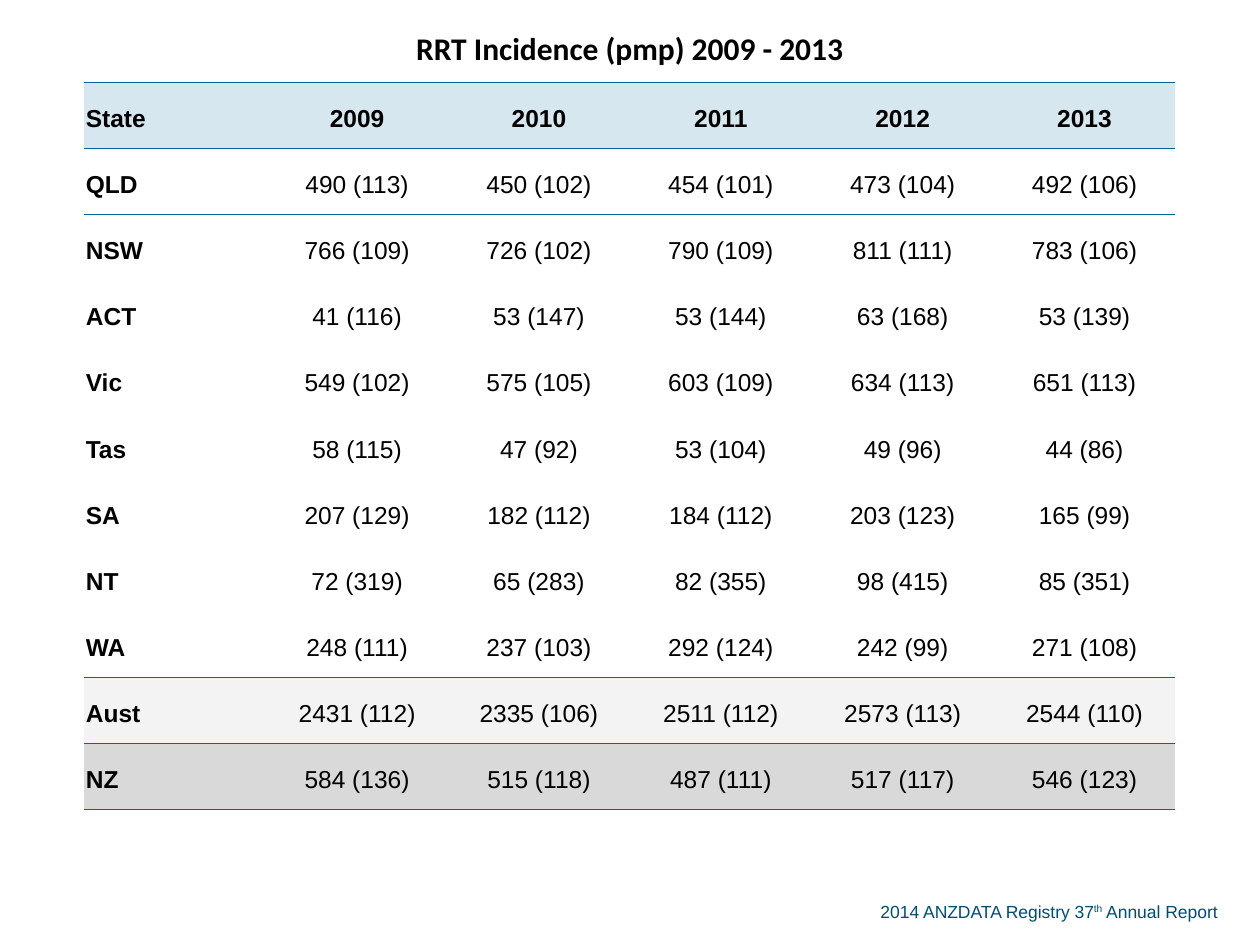
from lxml import etree
from pptx import Presentation
from pptx import util as u
from pptx.dml.color import RGBColor
from pptx.enum import text
from pptx.oxml.ns import qn

# Content
TITLE = "RRT Incidence (pmp) 2009 - 2013"
HEADER = ("State", "2009", "2010", "2011", "2012", "2013")
ROWS = [
    ("QLD", "490 (113)", "450 (102)", "454 (101)", "473 (104)", "492 (106)"),
    ("NSW", "766 (109)", "726 (102)", "790 (109)", "811 (111)", "783 (106)"),
    ("ACT", "41 (116)", "53 (147)", "53 (144)", "63 (168)", "53 (139)"),
    ("Vic", "549 (102)", "575 (105)", "603 (109)", "634 (113)", "651 (113)"),
    ("Tas", "58 (115)", "47 (92)", "53 (104)", "49 (96)", "44 (86)"),
    ("SA", "207 (129)", "182 (112)", "184 (112)", "203 (123)", "165 (99)"),
    ("NT", "72 (319)", "65 (283)", "82 (355)", "98 (415)", "85 (351)"),
    ("WA", "248 (111)", "237 (103)", "292 (124)", "242 (99)", "271 (108)"),
    ("Aust", "2431 (112)", "2335 (106)", "2511 (112)", "2573 (113)", "2544 (110)"),
    ("NZ", "584 (136)", "515 (118)", "487 (111)", "517 (117)", "546 (123)"),
]
SOURCE = (("2014 ANZDATA Registry 37", False), ("th", True), (" Annual Report", False))

COLORS = {"text": "000000", "rule": "006699", "source": "004D73",
          "State": "D7E7EF", "Aust": "F3F3F3", "NZ": "D9D9D9"}
RULED = ("State", "Aust", "NZ")  # rows with a line above and below
NO_STYLE = "{2D5ABB26-0587-4C30-8999-92F81FD0307C}"


def rgb(name):
    return RGBColor.from_string(COLORS[name])


def set_font(font, name, size, color, bold=False):
    font.name, font.size, font.bold = name, u.Pt(size), bold
    font.color.rgb = rgb(color)


def add_rule(cell, tag):
    """Draw one border; call before the cell is filled, top before bottom."""
    ln = etree.SubElement(cell._tc.get_or_add_tcPr(), qn(tag), w=str(u.Pt(0.5)))
    fill = etree.SubElement(ln, qn("a:solidFill"))
    etree.SubElement(fill, qn("a:srgbClr"), val=COLORS["rule"])


def fill_cell(cell, value, align):
    cell.vertical_anchor = text.MSO_ANCHOR.MIDDLE
    cell.margin_left = cell.margin_right = cell.margin_top = u.Cm(0.03)
    cell.margin_bottom = 0
    p = cell.text_frame.paragraphs[0]
    p.text, p.alignment = value, align
    return p


prs = Presentation()
prs.slide_width, prs.slide_height = u.Cm(25.4), u.Cm(19.05)
s = prs.slides.add_slide(prs.slide_layouts[6])

# Source line
sp = s.shapes.add_textbox(u.Cm(17.5), u.Cm(18.03), u.Cm(7.6), u.Cm(0.69))
sp.text_frame.word_wrap = True
p = sp.text_frame.paragraphs[0]
for words, raised in SOURCE:
    r = p.add_run()
    r.text = words
    if raised:
        r.font._element.set("baseline", "30000")
set_font(p.font, "Arial", 10, "source")

# Table
grid = [HEADER] + ROWS
n_rows, n_cols = len(grid) + 1, len(HEADER)
tbl = s.shapes.add_table(n_rows, n_cols, u.Cm(1.7), u.Cm(0.33), u.Cm(22), u.Cm(16)).table
tbl.first_row = tbl.horz_banding = False
tbl._tbl.tblPr.find(qn("a:tableStyleId")).text = NO_STYLE

# Title row
tbl.cell(0, 0).merge(tbl.cell(0, n_cols - 1))
p = fill_cell(tbl.cell(0, 0), TITLE, text.PP_ALIGN.CENTER)
set_font(p.font, "Calibri", 18, "text", True)
for c in range(n_cols):
    add_rule(tbl.cell(0, c), "a:lnB")
    tbl.cell(0, c).fill.background()

# Header and data rows
labels = [TITLE] + [row[0] for row in grid] + [""]
for i, row in enumerate(grid, 1):
    label = row[0]
    for c, value in enumerate(row):
        cell = tbl.cell(i, c)
        align = text.PP_ALIGN.CENTER if c else text.PP_ALIGN.LEFT
        p = fill_cell(cell, value, align)
        p.line_spacing, p.space_after = 1.19, u.Pt(14)
        set_font(p.font, "Arial", 14, "text", c == 0 or i == 1)
        if label in RULED or labels[i - 1] in RULED:
            add_rule(cell, "a:lnT")
        if label in RULED or labels[i + 1] in RULED:
            add_rule(cell, "a:lnB")
        if label in COLORS:
            cell.fill.solid()
            cell.fill.fore_color.rgb = rgb(label)
        else:
            cell.fill.background()

prs.save("out.pptx")
